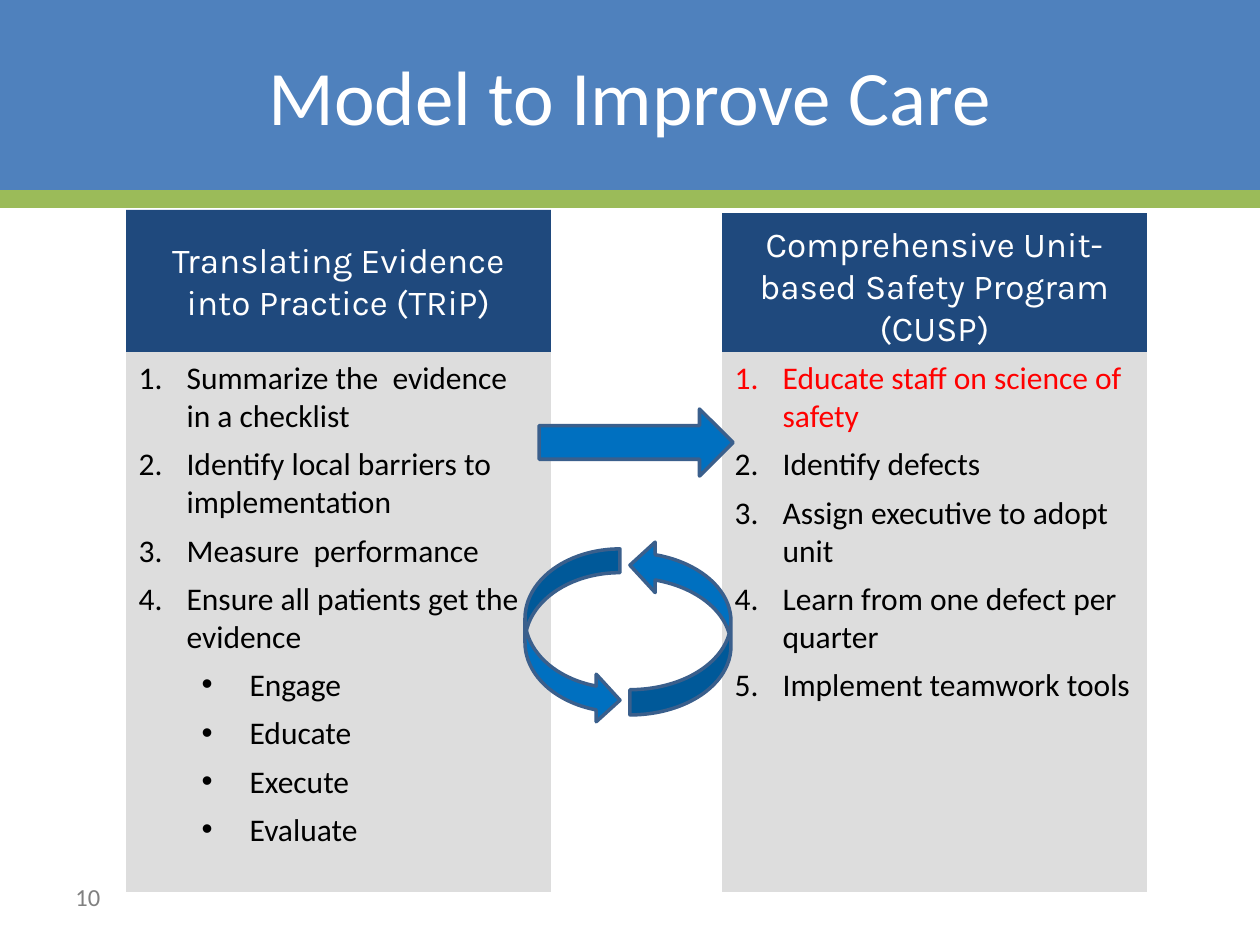
from lxml.etree import SubElement
from pptx import Presentation
from pptx.dml.color import RGBColor
from pptx.enum.shapes import MSO_CONNECTOR, MSO_SHAPE
from pptx.enum.text import MSO_ANCHOR, MSO_AUTO_SIZE, PP_ALIGN
from pptx.oxml.ns import qn
from pptx.util import Inches, Pt

PX = Inches(1) / 126
COLORS = {
    "band": "4F81BD", "rule": "9BBB59", "header": "1F497D", "panel": "DDDDDD",
    "arrow": "0070C0", "outline": "3A5F8C", "white": "FFFFFF",
    "black": "000000", "accent": "FF0000", "number": "808080",
}
TRIP_STEPS = [
    "Summarize the  evidence in a checklist",
    "Identify local barriers to implementation",
    "Measure  performance",
    "Ensure all patients get the evidence",
]
TRIP_ACTIONS = ["Engage", "Educate", "Execute", "Evaluate"]
CUSP_STEPS = [
    "Educate staff on science of safety",
    "Identify defects",
    "Assign executive to adopt unit",
    "Learn from one defect per quarter",
    "Implement teamwork tools",
]


def px(n):
    return round(n * PX)


def color(name):
    return RGBColor.from_string(COLORS[name])


def place(sp, box):
    sp.left, sp.top, sp.width, sp.height = map(px, box)


def paint(sp, name):
    sp.fill.solid()
    sp.fill.fore_color.rgb = color(name)


def format_runs(p, size, name, font="Calibri"):
    for r in p.runs:
        r.font.size = Pt(size)
        r.font.name = font
        r.font.bold = False
        r.font.color.rgb = color(name)


def set_text(sp, text, size, name, font="Calibri", align=PP_ALIGN.CENTER):
    tf = sp.text_frame
    tf.text = text
    tf.word_wrap = True
    tf.auto_size = MSO_AUTO_SIZE.NONE
    tf.vertical_anchor = MSO_ANCHOR.MIDDLE
    p = tf.paragraphs[0]
    p.alignment = align
    p.space_before = Pt(0)
    format_runs(p, size, name, font)


def add_band(slide):
    """Title background, sent to the back, and the rule below it."""
    sp = slide.shapes.add_shape(MSO_SHAPE.RECTANGLE, 0, 0, px(1260), px(199))
    sp.shadow.inherit = False
    paint(sp, "band")
    sp.line.fill.background()
    rule = slide.shapes.add_connector(MSO_CONNECTOR.STRAIGHT, 0, px(199), px(1260), px(199))
    rule.line.color.rgb = color("rule")
    rule.line.width = Pt(10)
    SubElement(rule._element.spPr, qn("a:effectLst"))
    for i, item in enumerate((sp, rule)):
        slide.shapes._spTree.insert(2 + i, item._element)


def fill_header(sp, box, text):
    place(sp, box)
    paint(sp, "header")
    set_text(sp, text, 20, "white", "Karla")


def set_bullet(p, level):
    p.level = level
    pPr = p._p.get_or_add_pPr()
    pPr.set("marL", str(px(48 + 63 * level)))
    pPr.set("indent", str(px(-48)))
    if level:
        SubElement(pPr, qn("a:buFont"), typeface="Arial")
        SubElement(pPr, qn("a:buChar"), char="•")
    else:
        SubElement(pPr, qn("a:buFont"), typeface="+mj-lt")
        SubElement(pPr, qn("a:buAutoNum"), type="arabicPeriod")


def fill_list(sp, box, steps, actions=(), highlight=None):
    place(sp, box)
    paint(sp, "panel")
    tf = sp.text_frame
    tf.text = "\n".join([*steps, *actions])
    tf.word_wrap = True
    tf.auto_size = MSO_AUTO_SIZE.NONE
    tf.vertical_anchor = MSO_ANCHOR.TOP
    for i, p in enumerate(tf.paragraphs):
        p.space_before = Pt(0)
        p.space_after = Pt(6)
        set_bullet(p, int(i >= len(steps)))
        format_runs(p, 18, "accent" if i == highlight else "black")


def add_arrow(slide, kind, box, flip=False):
    sp = slide.shapes.add_shape(kind, *map(px, box))
    sp.shadow.inherit = False
    paint(sp, "arrow")
    sp.line.color.rgb = color("outline")
    sp.line.width = Pt(2)
    if flip:
        sp._element.spPr.xfrm.set("flipV", "1")


def main():
    prs = Presentation()
    prs.slide_width, prs.slide_height = Inches(10), Inches(7.5)
    slide = prs.slides.add_slide(prs.slide_layouts[4])  # Comparison
    title, trip_head, trip_list, cusp_head, cusp_list = slide.placeholders

    # Title
    add_band(slide)
    place(title, (0, 0, 1260, 189))
    set_text(title, "Model to Improve Care", 44, "white")

    # Two columns
    fill_header(trip_head, (126, 210, 425, 142), "Translating Evidence into Practice (TRiP)")
    fill_list(trip_list, (126, 352, 425, 540), TRIP_STEPS, TRIP_ACTIONS)
    fill_header(cusp_head, (722, 213, 425, 144),
                "Comprehensive Unit-based Safety Program (CUSP)")
    fill_list(cusp_list, (722, 352, 425, 540), CUSP_STEPS, highlight=0)

    # Arrows between the columns
    add_arrow(slide, MSO_SHAPE.CURVED_RIGHT_ARROW, (525, 549, 95, 175))
    add_arrow(slide, MSO_SHAPE.CURVED_LEFT_ARROW, (630, 540, 101, 175), flip=True)
    add_arrow(slide, MSO_SHAPE.RIGHT_ARROW, (539, 409, 194, 67))

    # Slide number
    number = slide.shapes.add_textbox(*map(px, (63, 872, 294, 50)))
    set_text(number, "10", 14, "number", align=PP_ALIGN.LEFT)

    prs.save("out.pptx")


if __name__ == "__main__":
    main()
